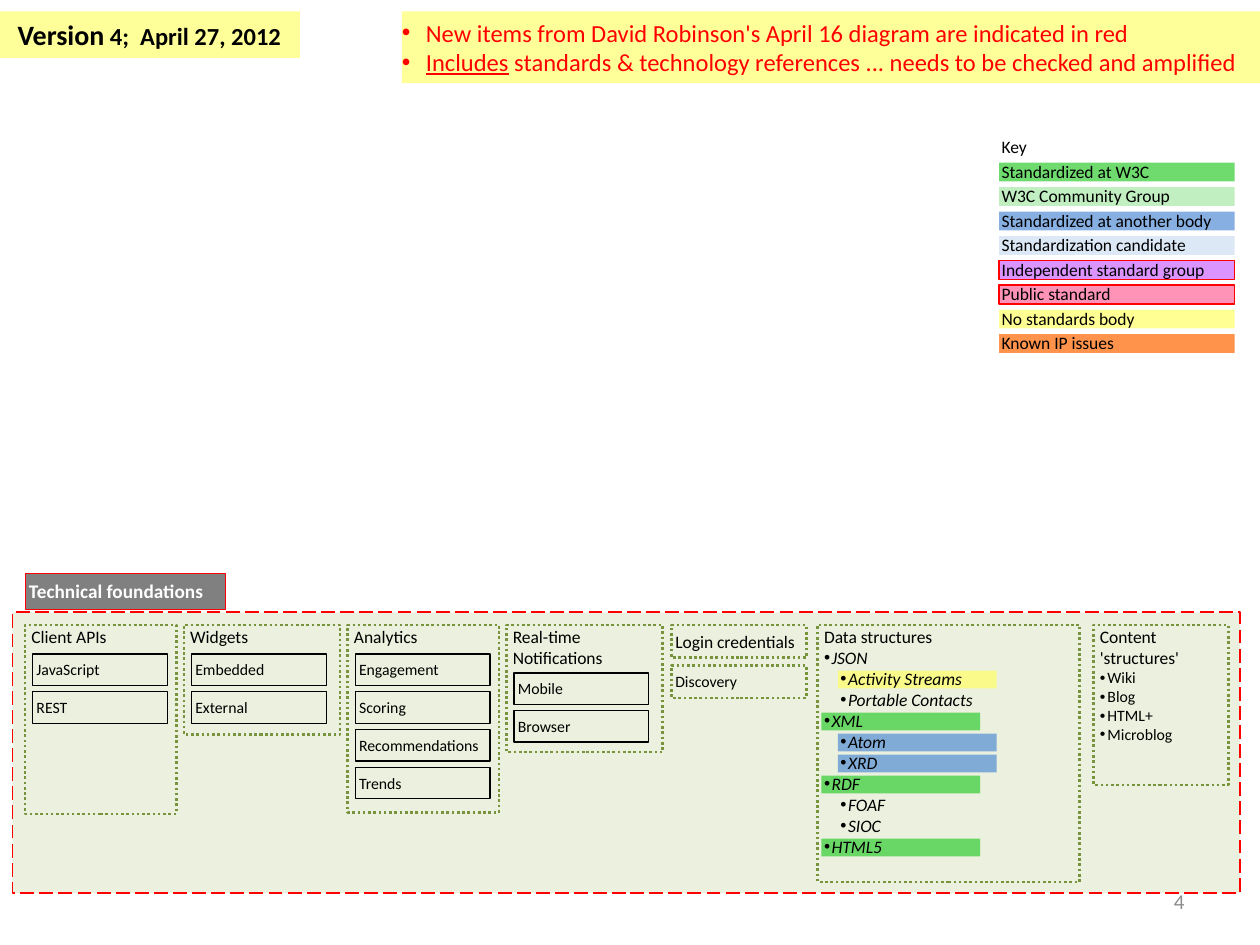
import pptx
import pptx.util
import pptx.dml.color
import pptx.enum.dml
import pptx.enum.shapes
import pptx.enum.text
import pptx.oxml
import pptx.oxml.ns
from pptx.util import Inches

RED, OLIVE, BLACK = "FF0000", "77933C", "000000"
GREEN, YELLOW, BLUE = "33CC33", "FFFF66", "558ED5"
DASH = pptx.enum.dml.MSO_LINE
ALIGN = pptx.enum.text.PP_ALIGN
PANEL_INSETS = (0.05, 0.01, 0.1, 0.05)
ITEM_INSETS = (0.03, 0.05, 0.02, 0.05)
ROW = 1 / 6  # height of a 10 pt line


def rgb(color):
    return pptx.dml.color.RGBColor.from_string(color)


def set_frame(s, insets):
    tf = s.text_frame
    tf.word_wrap = True
    tf.vertical_anchor = pptx.enum.text.MSO_ANCHOR.TOP
    tf.margin_left, tf.margin_top, tf.margin_right, tf.margin_bottom = map(Inches, insets)
    return tf


def add_rect(slide, x, y, w, h, fill=None, alpha=100, line=None, width=0.75, dash=None,
             insets=PANEL_INSETS):
    s = slide.shapes.add_shape(pptx.enum.shapes.MSO_SHAPE.RECTANGLE,
                               Inches(x), Inches(y), Inches(w), Inches(h))
    s.shadow.inherit = False
    if fill:
        s.fill.solid()
        s.fill.fore_color.rgb = rgb(fill)
        if alpha < 100:
            clr = s._element.spPr.find(".//" + pptx.oxml.ns.qn("a:srgbClr"))
            pptx.oxml.ns.qn("a:alpha")
            clr.append(pptx.oxml.parse_xml(
                f'<a:alpha {pptx.oxml.ns.nsdecls("a")} val="{alpha * 1000}"/>'))
    else:
        s.fill.background()
    if line:
        s.line.color.rgb = rgb(line)
        s.line.width = pptx.util.Pt(width)
        if dash:
            s.line.dash_style = dash
    else:
        s.line.fill.background()
    set_frame(s, insets)
    return s


def add_paragraph(tf, first=False, indent=None, hang=0.06, bullet=True, after=0, align=ALIGN.LEFT):
    p = tf.paragraphs[0] if first else tf.add_paragraph()
    p.alignment = align
    p.space_after = pptx.util.Pt(after)
    if indent is not None:
        pPr = p._p.get_or_add_pPr()
        pPr.set("marL", str(Inches(indent)))
        pPr.set("indent", str(Inches(-hang)))
        if bullet:
            ns = pptx.oxml.ns.nsdecls("a")
            pPr.append(pptx.oxml.parse_xml(f'<a:buFont {ns} typeface="Arial"/>'))
            pPr.append(pptx.oxml.parse_xml(f'<a:buChar {ns} char="•"/>'))
    return p


def add_run(p, text, size, color=BLACK, bold=False, italic=False, underline=False):
    r = p.add_run()
    r.text = text
    r.font.name = "Calibri"
    r.font.size = pptx.util.Pt(size)
    r.font.color.rgb = rgb(color)
    r.font.bold, r.font.italic, r.font.underline = bold, italic, underline


def add_item(slide, x, y, w, h, text, size=9, line=BLACK, width=0.75, dash=None):
    s = add_rect(slide, x, y, w, h, line=line, width=width, dash=dash, insets=ITEM_INSETS)
    add_run(add_paragraph(s.text_frame, first=True), text, size)


def add_panel(slide, x, y, w, h, *title_lines):
    s = add_rect(slide, x, y, w, h, line=OLIVE, width=1.5, dash=DASH.ROUND_DOT)
    p = add_paragraph(s.text_frame, first=True)
    for i, text in enumerate(title_lines):
        if i:
            p.add_line_break()
        add_run(p, text, 10)
    return s.text_frame


def add_item_panel(slide, x, y, w, h, title, items, first=0.23):
    add_panel(slide, x, y, w, h, title)
    for i, text in enumerate(items):
        add_item(slide, x + 0.06, y + first + 0.3 * i, 1.07, 0.25, text)


def add_data_panel(slide, x, y, w, h):
    rows = [  # text, nested, highlight
        ("JSON", False, None), ("Activity Streams", True, YELLOW),
        ("Portable Contacts", True, None), ("XML", False, GREEN),
        ("Atom", True, BLUE), ("XRD", True, BLUE), ("RDF", False, GREEN),
        ("FOAF", True, None), ("SIOC", True, None), ("HTML5", False, GREEN)]
    for i, (text, nested, color) in enumerate(rows, start=1):
        if color:
            add_rect(slide, x + (0.16 if nested else 0.03), y + 0.03 + i * ROW, 1.26, 0.14,
                     color, alpha=70)
    tf = add_panel(slide, x, y, w, h, "Data structures")
    for text, nested, color in rows:
        add_run(add_paragraph(tf, indent=0.19 if nested else 0.06), text, 10, italic=True)


def add_content_panel(slide, x, y, w, h):
    tf = add_panel(slide, x, y, w, h, "Content ", "'structures'")
    for text in ("Wiki", "Blog", "HTML+", "Microblog"):
        add_run(add_paragraph(tf, indent=0.06), text, 9)


def add_foundations(slide, x, y, w, h):
    add_rect(slide, x, y, w, h, "EBF1DE", line=RED, width=1, dash=DASH.LONG_DASH)
    tab = add_rect(slide, x + 0.1, y - 0.31, 1.59, 0.29, "808080", line=RED, insets=ITEM_INSETS)
    add_run(add_paragraph(tab.text_frame, first=True), "Technical foundations", 11, "FFFFFF", bold=True)
    top = y + 0.1
    add_item_panel(slide, 0.2, top, 1.2, 1.5, "Client APIs", ["JavaScript", "REST"])
    add_item_panel(slide, 1.46, top, 1.24, 0.87, "Widgets", ["Embedded", "External"])
    add_item_panel(slide, 2.76, top, 1.2, 1.49, "Analytics",
                   ["Engagement", "Scoring", "Recommendations", "Trends"])
    add_item_panel(slide, 4.02, top, 1.24, 1.01, "Real-time Notifications",
                   ["Mobile", "Browser"], first=0.38)
    for i, (text, size) in enumerate([("Login credentials", 10), ("Discovery", 9)]):
        add_item(slide, 5.33, top + 0.32 * i, 1.07, 0.26, text, size, OLIVE, 1.5, DASH.ROUND_DOT)
    add_data_panel(slide, 6.49, top, 2.08, 2.04)
    add_content_panel(slide, 8.68, top, 1.07, 1.27)


def add_key(slide, x, y, w, h):
    entries = [  # text, colour, opacity, outline
        ("Standardized at W3C", GREEN, 70, None), ("W3C Community Group", GREEN, 30, None),
        ("Standardized at another body", BLUE, 70, None),
        ("Standardization candidate", BLUE, 20, None),
        ("Independent standard group", "CC66FF", 70, RED),
        ("Public standard", "FF6699", 70, RED),
        ("No standards body", YELLOW, 70, None), ("Known IP issues", "FF6600", 70, None)]
    for i, (text, color, alpha, line) in enumerate(entries):
        add_rect(slide, x + 0.03, y + 0.22 + i * (ROW + 2 / 72), 1.87, 0.15, color, alpha, line)
    tb = slide.shapes.add_textbox(Inches(x), Inches(y), Inches(w), Inches(h))
    tf = set_frame(tb, PANEL_INSETS)
    add_run(add_paragraph(tf, first=True, after=2), "Key", 10)
    for entry in entries:
        add_run(add_paragraph(tf, indent=0.06, bullet=False, after=2), entry[0], 10)


def add_version(slide, x, y, w, h):
    s = add_rect(slide, x, y, w, h, "FFFF99", insets=(0.14, 0.05, 0.05, 0.05))
    p = add_paragraph(s.text_frame, first=True)
    add_run(p, "Version", 16, bold=True)
    add_run(p, " 4;  April 27, 2012", 14, bold=True)


def add_notice(slide, x, y, w, h):
    s = add_rect(slide, x, y, w, h, "FFFF99", insets=(0, 0.05, 0, 0.05))
    p = add_paragraph(s.text_frame, first=True, indent=0.19, hang=0.19)
    add_run(p, "New items from David Robinson's April 16 diagram are indicated in red", 14, RED)
    p = add_paragraph(s.text_frame, indent=0.19, hang=0.19)
    add_run(p, "Includes", 14, RED, underline=True)
    add_run(p, " standards & technology references ... needs to be checked and amplified", 14, RED)


def add_page_number(slide, x, y, w, h):
    tb = slide.shapes.add_textbox(Inches(x), Inches(y), Inches(w), Inches(h))
    tf = set_frame(tb, (0.1, 0.05, 0.1, 0.05))
    tf.vertical_anchor = pptx.enum.text.MSO_ANCHOR.MIDDLE
    add_run(add_paragraph(tf, first=True, align=ALIGN.RIGHT), "4", 12, "8C8C8C")


def main():
    prs = pptx.Presentation()
    prs.slide_width, prs.slide_height = Inches(10), Inches(7.5)
    slide = prs.slides.add_slide(prs.slide_layouts[6])
    add_foundations(slide, 0.1, 4.86, 9.74, 2.23)
    add_key(slide, 7.9, 1.07, 1.94, 1.83)
    add_version(slide, 0, 0.09, 2.38, 0.37)
    add_notice(slide, 3.19, 0.09, 6.81, 0.57)
    add_page_number(slide, 7.17, 6.95, 2.33, 0.4)
    prs.save("out.pptx")


if __name__ == "__main__":
    main()
